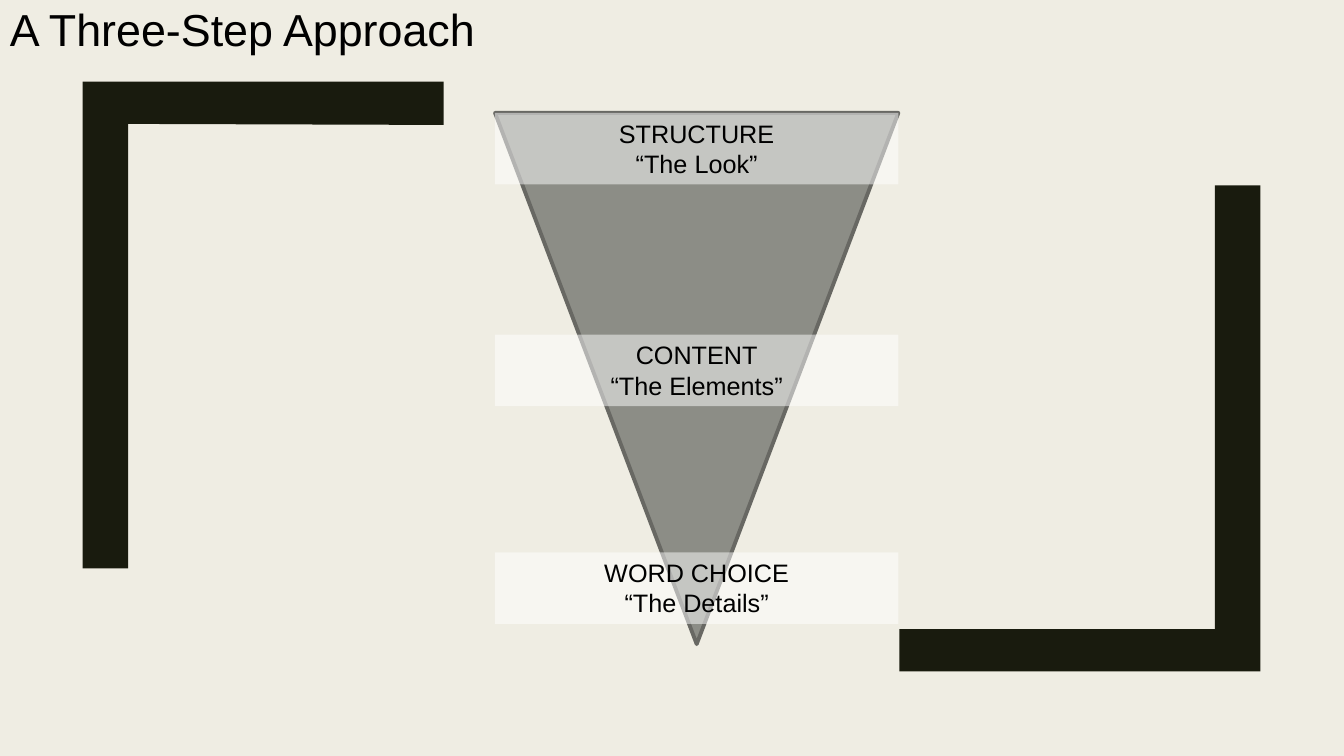
import pptx
import pptx.util
import pptx.dml.color
import pptx.enum.shapes
import pptx.enum.text
import pptx.oxml.ns
import lxml.etree

Inches = pptx.util.Inches
Pt = pptx.util.Pt
Align = pptx.enum.text.PP_ALIGN
Anchor = pptx.enum.text.MSO_ANCHOR
Preset = pptx.enum.shapes.MSO_SHAPE

COLOURS = {
    "background": "EFEDE3",
    "bracket": "191B0E",
    "funnel": "8C8D86",
    "funnel_edge": "686863",
    "band": "FFFFFF",
    "text": "000000",
}
FONT = "Arial"

# Funnel and its bands share a left edge and a width
FUNNEL_LEFT, FUNNEL_TOP, FUNNEL_WIDTH, FUNNEL_HEIGHT = 4.91, 1.12, 4, 5.27
BAND_HEIGHT = 0.71
STEPS = [
    (1.12, "STRUCTURE", "“The Look”"),
    (3.32, "CONTENT", "“The Elements”"),
    (5.48, "WORD CHOICE", "“The Details”"),
]

# Corner brackets
RIGHT_BRACKET = [(12.05, 1.84), (12.5, 1.84), (12.5, 6.66),
                 (8.92, 6.66), (8.92, 6.24), (12.05, 6.24)]
LEFT_BRACKET = [(1.27, 5.64), (0.82, 5.64), (0.82, 0.81),
                (4.4, 0.81), (4.4, 1.24), (1.27, 1.23)]


def rgb(name):
    return pptx.dml.color.RGBColor.from_string(COLOURS[name])


def paint(shape, fill):
    shape.shadow.inherit = False
    shape.fill.solid()
    shape.fill.fore_color.rgb = rgb(fill)
    shape.line.fill.background()


def add_text(paragraph, words, size):
    run = paragraph.add_run()
    run.text = words
    run.font.name = FONT
    run.font.size = Pt(size)
    run.font.color.rgb = rgb("text")


def add_bracket(slide, corners):
    points = [(Inches(x), Inches(y)) for x, y in corners]
    builder = slide.shapes.build_freeform(*points[0])
    builder.add_line_segments(points[1:], close=True)
    paint(builder.convert_to_shape(), "bracket")


def add_title(slide, words):
    title = slide.shapes.add_textbox(0, 0, Inches(7.36), Inches(0.61))
    frame = title.text_frame
    frame.word_wrap = True
    frame.vertical_anchor = Anchor.BOTTOM
    frame.paragraphs[0].line_spacing = 0.9
    add_text(frame.paragraphs[0], words, 32)


def add_funnel(slide):
    funnel = slide.shapes.add_shape(
        Preset.ISOSCELES_TRIANGLE, Inches(FUNNEL_LEFT), Inches(FUNNEL_TOP),
        Inches(FUNNEL_WIDTH), Inches(FUNNEL_HEIGHT))
    paint(funnel, "funnel")
    funnel.rotation = 180
    funnel.line.color.rgb = rgb("funnel_edge")
    funnel.line.width = Pt(2.75)
    # Rounded corners on the outline
    edge = funnel.line.fill._xPr
    lxml.etree.SubElement(edge, pptx.oxml.ns.qn("a:round"))


def add_band(slide, top, *lines):
    band = slide.shapes.add_shape(
        Preset.RECTANGLE, Inches(FUNNEL_LEFT), Inches(top),
        Inches(FUNNEL_WIDTH), Inches(BAND_HEIGHT))
    paint(band, "band")
    # Half-transparent fill
    colour = band.fill._xPr.find(".//" + pptx.oxml.ns.qn("a:srgbClr"))
    alpha = lxml.etree.SubElement(colour, pptx.oxml.ns.qn("a:alpha"))
    alpha.set("val", "50000")

    frame = band.text_frame
    frame.word_wrap = True
    frame.vertical_anchor = Anchor.TOP
    for number, words in enumerate(lines):
        paragraph = frame.add_paragraph() if number else frame.paragraphs[0]
        paragraph.alignment = Align.CENTER
        add_text(paragraph, words, 18)


def main():
    deck = pptx.Presentation()
    deck.slide_width = Inches(13.33)
    deck.slide_height = Inches(7.5)
    slide = deck.slides.add_slide(deck.slide_layouts[6])
    slide.background.fill.solid()
    slide.background.fill.fore_color.rgb = rgb("background")

    # Frame and title
    add_bracket(slide, RIGHT_BRACKET)
    add_bracket(slide, LEFT_BRACKET)
    add_title(slide, "A Three-Step Approach")

    # Funnel with its three steps
    add_funnel(slide)
    for step in STEPS:
        add_band(slide, *step)

    deck.save("out.pptx")


if __name__ == "__main__":
    main()
